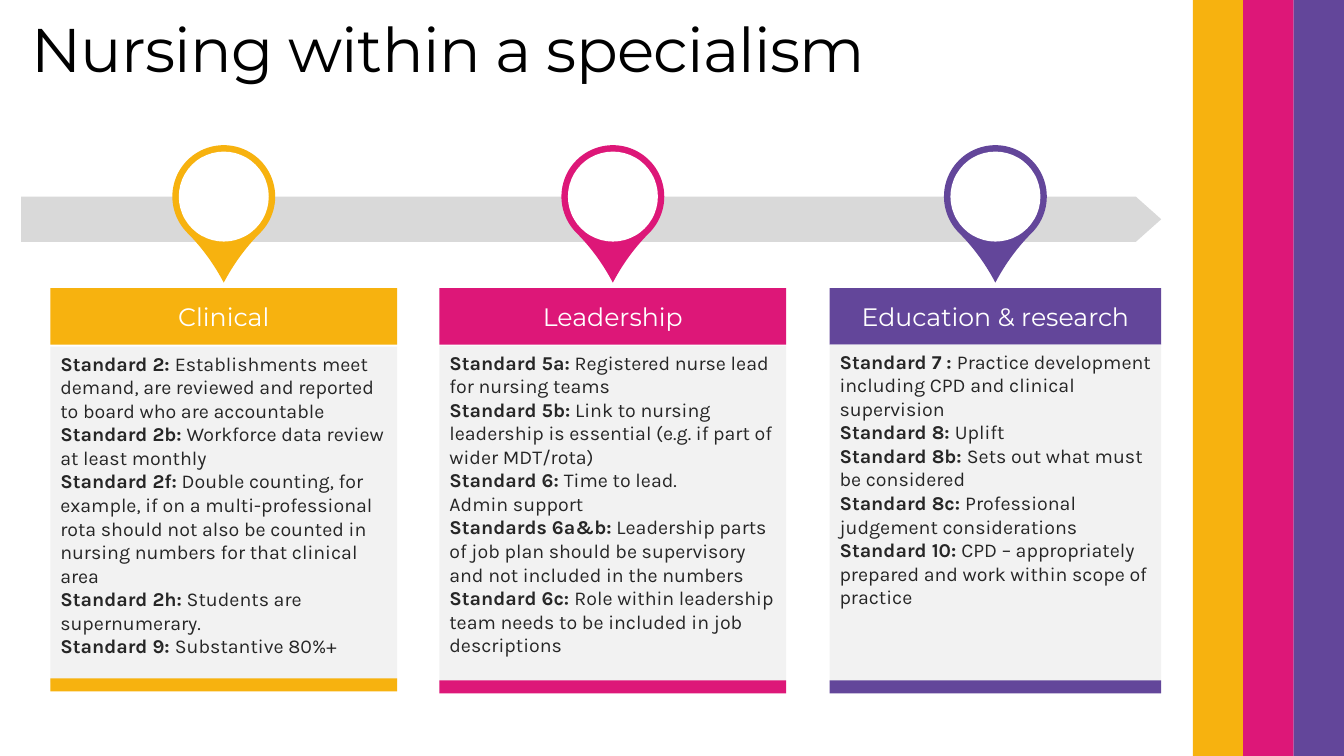
from collections import namedtuple
from pptx import Presentation
from pptx.dml.color import RGBColor
from pptx.enum.shapes import MSO_SHAPE
from pptx.enum.text import MSO_ANCHOR, PP_ALIGN
from pptx.util import Inches, Pt

COLORS = {
    "yellow": "F7B20F", "pink": "DD1778", "purple": "63469A",
    "arrow": "D9D9D9", "panel": "F2F2F2", "body": "262626",
    "white": "FFFFFF", "black": "000000",
}
GRID_UNIT = Inches(0.1)
COLUMNS, ROWS = 133.33, 75
Box = namedtuple("Box", "left top width height")
Pillar = namedtuple("Pillar", "heading color left width body_top foot_top standards")

PILLARS = [
    Pillar("Clinical", "yellow", 5, 34.4, 34.4, 67.3, [
        ("Standard 2: ", "Establishments meet demand, are reviewed and reported "
                         "to board who are accountable"),
        ("Standard 2b:", " Workforce data review at least monthly"),
        ("Standard 2f:", " Double counting, for example, if on a multi-professional rota "
                         "should not also be counted in nursing numbers for that clinical area"),
        ("Standard 2h:", " Students are supernumerary."),
        ("Standard 9: ", "Substantive 80%+"),
    ]),
    Pillar("Leadership", "pink", 43.6, 34.4, 34.3, 67.5, [
        ("Standard 5a:", " Registered nurse lead for nursing teams"),
        ("Standard 5b:", " Link to nursing leadership is essential "
                         "(e.g. if part of wider MDT/rota)"),
        ("Standard 6: ", "Time to lead."),
        ("", "Admin support"),
        ("Standards 6a&b:", " Leadership parts of job plan should be supervisory "
                            "and not included in the numbers"),
        ("Standard 6c: ", "Role within leadership team needs to be included "
                          "in job descriptions"),
    ]),
    Pillar("Education & research", "purple", 82.3, 32.9, 34.2, 67.5, [
        ("Standard 7 : ", "Practice development including CPD and clinical supervision"),
        ("Standard 8: ", "Uplift"),
        ("Standard 8b: ", "Sets out what must be considered"),
        ("Standard 8c: ", "Professional judgement considerations"),
        ("Standard 10:", " CPD – appropriately prepared and work within scope of practice"),
    ]),
]


def on_grid(box):
    return [round(length * GRID_UNIT) for length in box]


def add_block(slide, box, color, preset=MSO_SHAPE.RECTANGLE, adjustments=(), rotation=0):
    block = slide.shapes.add_shape(preset, *on_grid(box))
    block.shadow.inherit = False
    block.fill.solid()
    block.fill.fore_color.rgb = RGBColor.from_string(COLORS[color])
    block.line.fill.background()
    block.rotation = rotation
    for index, value in enumerate(adjustments):
        block.adjustments[index] = value
    return block


def add_run(paragraph, text, font, size, color, bold=False):
    run = paragraph.add_run()
    run.text = text
    run.font.name = font
    run.font.size = Pt(size)
    run.font.bold = bold
    run.font.color.rgb = RGBColor.from_string(COLORS[color])
    return run


def add_title(slide, box):
    frame = slide.shapes.add_textbox(*on_grid(box)).text_frame
    frame.word_wrap = True
    title = frame.paragraphs[0]
    title.line_spacing = 0.9
    run = add_run(title, "Nursing within a specialism", "Montserrat", 44, "black")
    run._r.get_or_add_rPr().set("spc", "-50")


def add_stripes(slide, box):
    names = ("yellow", "pink", "purple")
    stripe = box.width / len(names)
    for index, color in enumerate(names):
        left = box.left + index * stripe
        add_block(slide, Box(left, box.top, stripe, box.height), color)


def add_timeline(slide, box):
    add_block(slide, box, "arrow", MSO_SHAPE.RIGHT_ARROW, (1, 0.56))


def add_pin(slide, box, color):
    add_block(slide, box, color, MSO_SHAPE.TEAR, (1.184,), 135)
    rim = box.width / 16
    hole = box.width - 2 * rim
    add_block(slide, Box(box.left + rim, box.top + rim, hole, hole), "white", MSO_SHAPE.OVAL)


def add_heading(slide, box, pillar):
    frame = add_block(slide, box, pillar.color).text_frame
    frame.word_wrap = True
    frame.vertical_anchor = MSO_ANCHOR.MIDDLE
    frame.paragraphs[0].alignment = PP_ALIGN.CENTER
    add_run(frame.paragraphs[0], pillar.heading, "Montserrat", 18, "white")


def add_standards(slide, box, standards):
    frame = add_block(slide, box, "panel").text_frame
    frame.word_wrap = True
    frame.vertical_anchor = MSO_ANCHOR.TOP
    for index, (label, detail) in enumerate(standards):
        paragraph = frame.add_paragraph() if index else frame.paragraphs[0]
        paragraph.alignment = PP_ALIGN.LEFT
        if label:
            add_run(paragraph, label, "Karla", 14, "body", bold=True)
        add_run(paragraph, detail, "Karla", 14, "body")


def add_pillar(slide, box, pillar):
    pin = 10.2
    pin_left = box.left + (box.width - pin) / 2
    add_pin(slide, Box(pin_left, box.top, pin, pin), pillar.color)
    add_heading(slide, Box(box.left, box.top + 14.2, box.width, 5.6), pillar)
    body_height = box.top + box.height - pillar.body_top
    add_standards(slide, Box(box.left, pillar.body_top, box.width, body_height), pillar.standards)
    add_block(slide, Box(box.left, pillar.foot_top, box.width, 1.3), pillar.color)


def main():
    deck = Presentation()
    deck.slide_width = round(COLUMNS * GRID_UNIT)
    deck.slide_height = ROWS * GRID_UNIT
    slide = deck.slides.add_slide(deck.slide_layouts[6])
    add_stripes(slide, Box(COLUMNS - 15, 0, 15, ROWS))
    add_timeline(slide, Box(2.1, 19.5, 113.1, 4.5))
    for pillar in PILLARS:
        add_pillar(slide, Box(pillar.left, 14.4, pillar.width, 53.3), pillar)
    add_title(slide, Box(2.1, 1.4, 106, 8.9))
    deck.save("out.pptx")


if __name__ == "__main__":
    main()
